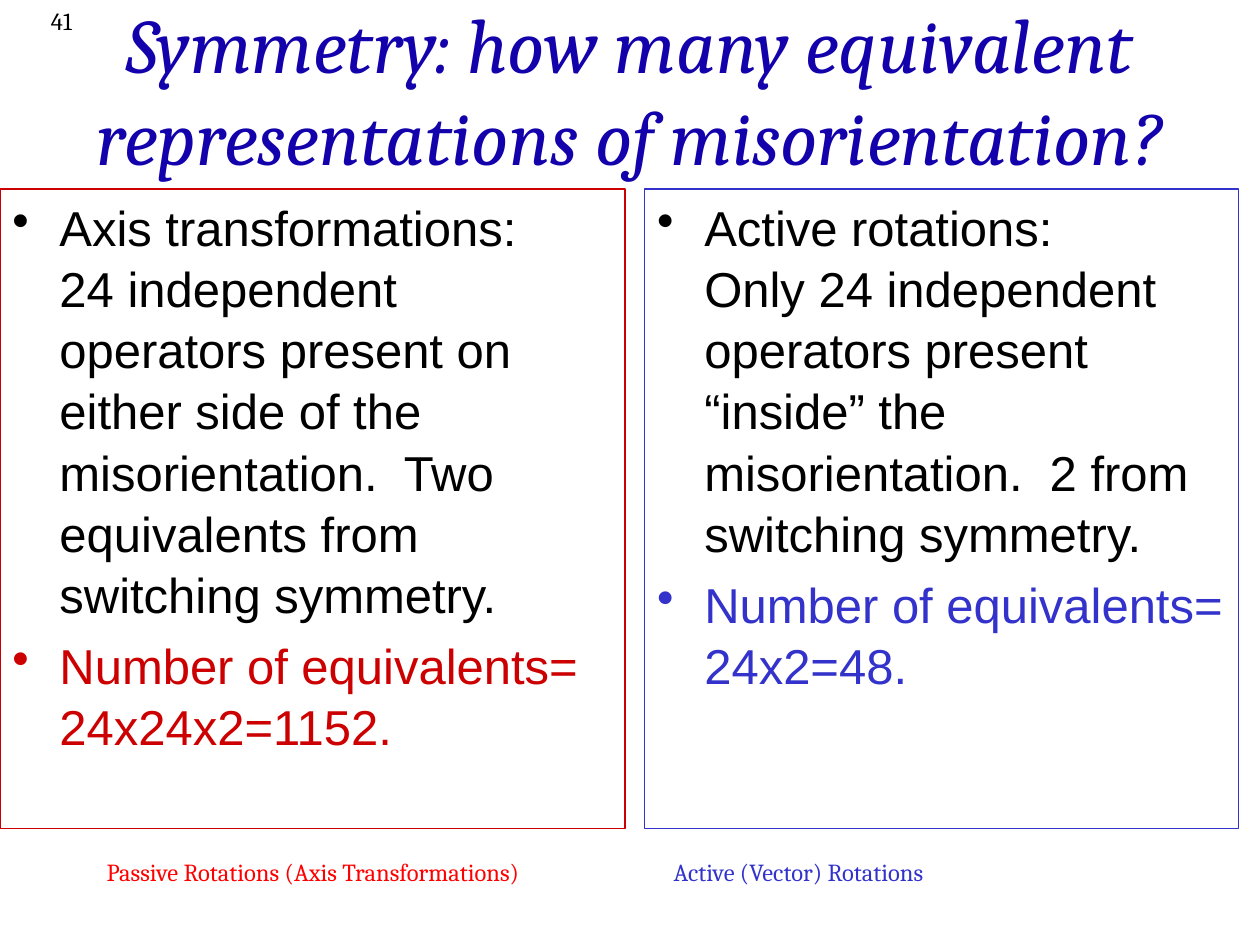
import dataclasses

import lxml.etree
import pptx
import pptx.dml.color
import pptx.enum.shapes
import pptx.enum.text
import pptx.oxml.ns
import pptx.util
from pptx.util import Cm

BLACK, RED, BLUE = "000000", "CC0000", "3333CC"
NAVY, BRIGHT_RED = "1301AB", "FF0000"
ALIGN = pptx.enum.text.PP_ALIGN
ANCHOR = pptx.enum.text.MSO_ANCHOR


@dataclasses.dataclass
class Panel:
    left: float
    width: float
    color: str
    explanation: tuple[str, ...]
    count: tuple[str, ...]


PANELS = [
    Panel(0, 12.6, RED,
          ("Axis transformations:",
           "24 independent operators present on either side of the "
           "misorientation.  Two equivalents from switching symmetry."),
          ("Number of equivalents=", "24x24x2=1152.")),
    Panel(13, 11.97, BLUE,
          ("Active rotations:",
           "Only 24 independent operators present “inside” the "
           "misorientation.  2 from switching symmetry."),
          ("Number of equivalents=", "24x2=48.")),
]


def rgb(color: str) -> pptx.dml.color.RGBColor:
    return pptx.dml.color.RGBColor.from_string(color)


def add_span(para, text: str, size: float, color: str,
             font: str = "Cambria", italic: bool = False) -> None:
    span = para.add_run()
    span.text = text
    span.font.size = pptx.util.Pt(size)
    span.font.name = font
    span.font.italic = italic
    span.font.color.rgb = rgb(color)


def add_box(page, left: float, top: float, width: float, height: float,
            align=ALIGN.LEFT, anchor=ANCHOR.TOP, wrap: bool = True):
    """Add a text box and return its first paragraph."""
    box = page.shapes.add_textbox(Cm(left), Cm(top), Cm(width), Cm(height))
    box.text_frame.word_wrap = wrap
    box.text_frame.vertical_anchor = anchor
    para = box.text_frame.paragraphs[0]
    para.alignment = align
    return para


def add_bullet(para, lines: tuple[str, ...], color: str) -> None:
    para.alignment = ALIGN.LEFT
    para.space_before = pptx.util.Pt(5.6)
    para.line_spacing = 1.04
    properties = para._p.get_or_add_pPr()
    properties.set("marL", str(Cm(0.95)))
    properties.set("indent", str(-Cm(0.95)))
    bullet = lxml.etree.SubElement(properties, pptx.oxml.ns.qn("a:buChar"))
    bullet.set("char", "•")
    for index, line in enumerate(lines):
        if index:
            para.add_line_break()
        add_span(para, line, 28, color, "Arial")


def add_panel(page, panel: Panel) -> None:
    box = page.shapes.add_shape(
        pptx.enum.shapes.MSO_SHAPE.RECTANGLE,
        Cm(panel.left), Cm(3.81), Cm(panel.width), Cm(12.9))
    box.shadow.inherit = False
    box.fill.background()
    box.line.color.rgb = rgb(panel.color)
    box.line.width = pptx.util.Pt(0.75)
    frame = box.text_frame
    frame.word_wrap = True
    frame.vertical_anchor = ANCHOR.TOP
    add_bullet(frame.paragraphs[0], panel.explanation, BLACK)
    add_bullet(frame.add_paragraph(), panel.count, panel.color)


def main() -> None:
    deck = pptx.Presentation()
    deck.slide_width, deck.slide_height = Cm(25.4), Cm(19.05)
    page = deck.slides.add_slide(deck.slide_layouts[6])

    # Page number and title
    number = add_box(page, 0, 0, 1.7, 0.85, ALIGN.RIGHT)
    add_span(number, "41", 14, BLACK)
    title = add_box(page, 0, 0.2, 25.4, 3.18, ALIGN.CENTER, ANCHOR.MIDDLE)
    add_span(title, "Symmetry: how many equivalent representations of "
             "misorientation?", 44, NAVY, italic=True)

    # Passive and active panels
    for panel in PANELS:
        add_panel(page, panel)

    # Captions, set apart by tabs
    caption = add_box(page, 1.9, 17.15, 20.88, 0.85, wrap=False)
    add_span(caption, "Passive Rotations (Axis Transformations)\t\t\t",
             14, BRIGHT_RED)
    add_span(caption, "Active (Vector) Rotations", 14, BLUE)

    deck.save("out.pptx")


if __name__ == "__main__":
    main()
